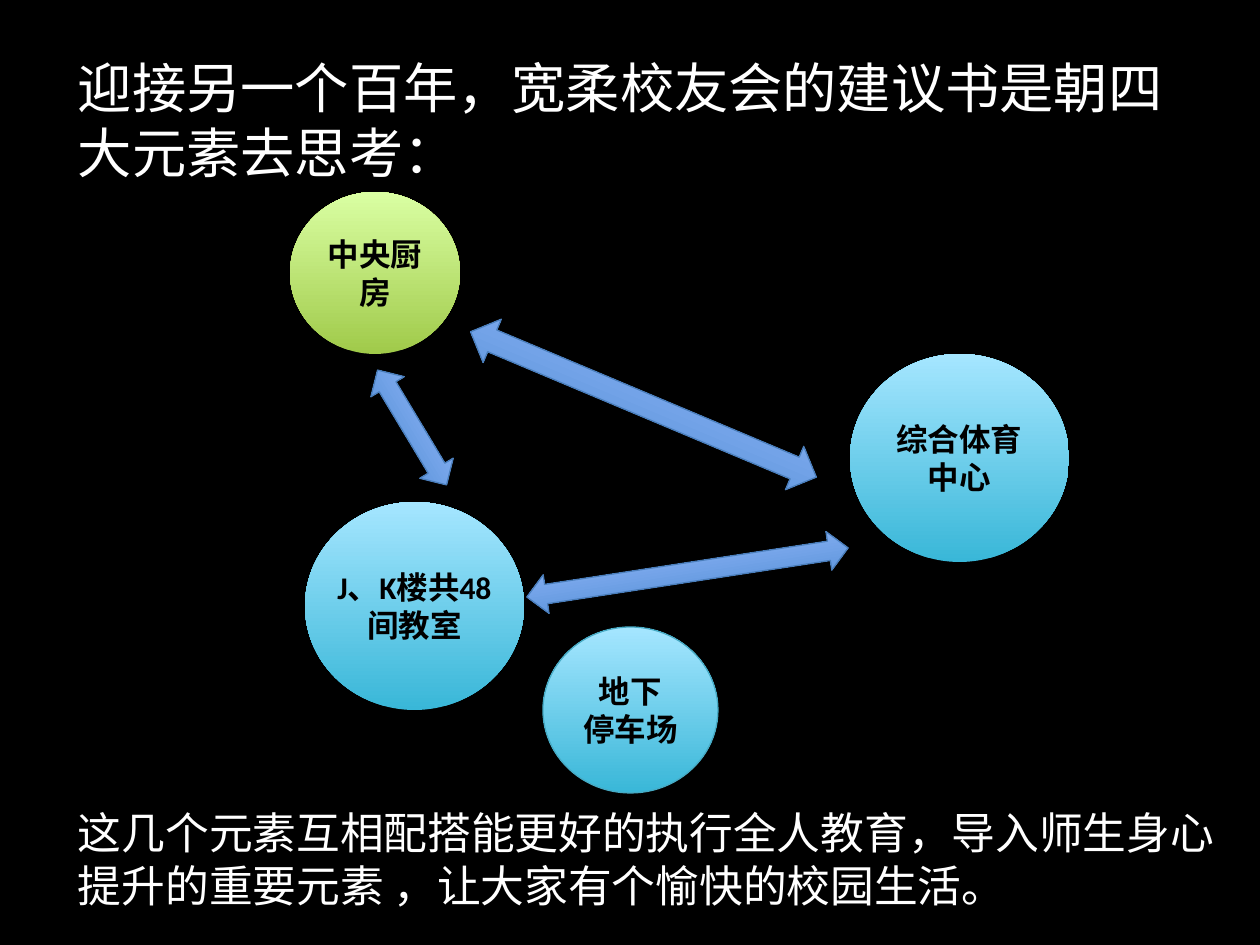
import pptx
import pptx.util
import pptx.dml.color
import pptx.enum.shapes
import pptx.enum.text

SHAPE = pptx.enum.shapes.MSO_SHAPE
ALIGN = pptx.enum.text.PP_ALIGN
ANCHOR = pptx.enum.text.MSO_ANCHOR
FIT = pptx.enum.text.MSO_AUTO_SIZE

BLACK, WHITE = "000000", "FFFFFF"
BLUE = ("39B7D8", "A5E6FF")
GREEN = ("A0CA4A", "DAFFA3")
STEEL = ("3F80CE", "A2C3FF")


def px(num):
    return pptx.util.Emu(round(num * 914400 / 126))


def hue(code):
    return pptx.dml.color.RGBColor.from_string(code)


def write(shape, lines, size, color, bold=False, align=ALIGN.LEFT,
          anchor=ANCHOR.MIDDLE, inset=6):
    frame = shape.text_frame
    frame.auto_size = FIT.NONE
    frame.word_wrap = True
    frame.vertical_anchor = anchor
    frame.margin_left = frame.margin_right = px(inset)
    frame.margin_top = frame.margin_bottom = px(inset)
    for i, line in enumerate(lines):
        para = frame.add_paragraph() if i else frame.paragraphs[0]
        para.alignment = align
        run = para.add_run()
        run.text = line
        run.font.name = "Calibri"
        run.font.size = pptx.util.Pt(size)
        run.font.bold = bold
        run.font.color.rgb = hue(color)


def add_form(slide, kind, box, fade, edge=None):
    """Add a shape whose fill fades from bottom to top."""
    shape = slide.shapes.add_shape(kind, *map(px, box))
    shape.shadow.inherit = False
    shape.fill.gradient()
    shape.fill.gradient_angle = 90
    for stop, code, spot in zip(shape.fill.gradient_stops, fade, (0, 1)):
        stop.color.rgb = hue(code)
        stop.position = spot
    if edge:
        shape.line.color.rgb = hue(edge)
        shape.line.width = pptx.util.Pt(0.75)
    else:
        shape.line.fill.background()
    return shape


def add_disc(slide, box, lines, fade, edge=None):
    disc = add_form(slide, SHAPE.OVAL, box, fade, edge)
    write(disc, lines, 18, BLACK, True, ALIGN.CENTER, inset=0)


def add_arrow(slide, box, turn):
    arrow = add_form(slide, SHAPE.LEFT_RIGHT_ARROW, box, STEEL, "4A7EBB")
    arrow.rotation = turn


def main():
    deck = pptx.Presentation()
    deck.slide_width, deck.slide_height = px(1260), px(945)
    slide = deck.slides.add_slide(deck.slide_layouts[5])
    slide.background.fill.solid()
    slide.background.fill.fore_color.rgb = hue(BLACK)

    # Closing statement, held by the title placeholder
    title = slide.shapes.title
    title.left, title.top, title.width, title.height = map(
        px, (72, 757, 1152, 203))
    write(title, ["这几个元素互相配搭能更好的执行全人教育，导入师生身心"
                  "提升的重要元素 ，让大家有个愉快的校园生活。"], 25, WHITE)

    # Four elements
    add_disc(slide, (305, 502, 219, 208), ["J、K楼共48间教室"], BLUE)
    add_disc(slide, (850, 354, 219, 208), ["综合体育中心"], BLUE)
    add_disc(slide, (290, 192, 170, 162), ["中央厨房"], GREEN)
    add_disc(slide, (543, 627, 175, 166), ["地下", "停车场"], BLUE, "46AAC4")

    # Links between them
    add_arrow(slide, (345, 408, 134, 39), 59)
    add_arrow(slide, (525, 553, 325, 39), 351.3)
    add_arrow(slide, (456, 381, 375, 47), 22.8)

    # Opening statement
    intro = slide.shapes.add_textbox(*map(px, (72, 48, 1142, 123)))
    write(intro, ["迎接另一个百年，宽柔校友会的建议书是朝四大元素去思考："],
          31, WHITE, anchor=ANCHOR.TOP)

    deck.save("out.pptx")


if __name__ == "__main__":
    main()
